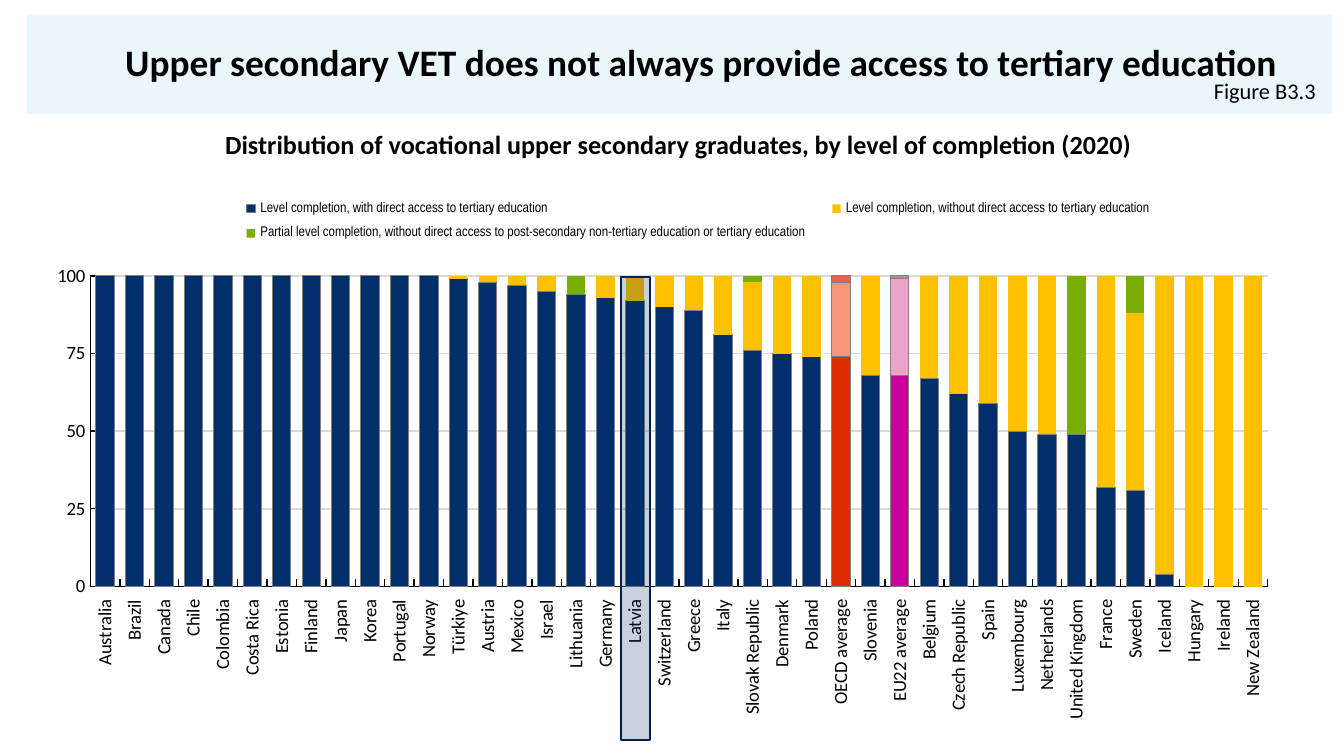
from pptx import Presentation, util as u
from pptx.chart.data import CategoryChartData
from pptx.dml.color import RGBColor
from pptx.enum import chart as ce, shapes, text
from pptx.oxml import parse_xml
from pptx.oxml.ns import nsdecls

SCALE = 914400 / 134.4
NAMES = [
    "Level completion, with direct access to tertiary education",
    "Level completion, without direct access to tertiary education",
    "Partial level completion, without direct access to "
    "post-secondary non-tertiary education or tertiary education",
]
HUES = ["002F6C", "FFC000", "79AF02"]
MEANS = {
    "OECD average": ["DD2C00", "F79779", "E4644B"],
    "EU22 average": ["CC0099", "EAA4C8", "C8838D"],
}
ROWS = [
    *[(land, 100, 0, 0) for land in (
        "Australia", "Brazil", "Canada", "Chile", "Colombia", "Costa Rica",
        "Estonia", "Finland", "Japan", "Korea", "Portugal", "Norway")],
    ("Türkiye", 99, 1, 0), ("Austria", 98, 2, 0), ("Mexico", 97, 3, 0),
    ("Israel", 95, 5, 0), ("Lithuania", 94, 0, 6), ("Germany", 93, 7, 0),
    ("Latvia", 92, 8, 0), ("Switzerland", 90, 10, 0), ("Greece", 89, 11, 0),
    ("Italy", 81, 19, 0), ("Slovak Republic", 76, 22, 2),
    ("Denmark", 75, 25, 0), ("Poland", 74, 26, 0),
    ("OECD average", 74, 24, 2), ("Slovenia", 68, 32, 0),
    ("EU22 average", 68, 31, 1), ("Belgium", 67, 33, 0),
    ("Czech Republic", 62, 38, 0), ("Spain", 59, 41, 0),
    ("Luxembourg", 50, 50, 0), ("Netherlands", 49, 51, 0),
    ("United Kingdom", 49, 0, 51), ("France", 32, 68, 0),
    ("Sweden", 31, 57, 12), ("Iceland", 4, 96, 0),
    *[(land, 0, 100, 0) for land in ("Hungary", "Ireland", "New Zealand")],
]


def px(*nums):
    """Turn pixel lengths into EMU."""
    return [u.Emu(round(n * SCALE)) for n in nums]


def rgb(code):
    """Make a colour from a hex string."""
    return RGBColor.from_string(code)


def paint(fmt, hue, edge=None, width=0.5):
    """Give a solid fill and, if named, an outline."""
    fmt.fill.solid()
    fmt.fill.fore_color.rgb = rgb(hue)
    if edge:
        fmt.line.color.rgb = rgb(edge)
        fmt.line.width = u.Pt(width)


def style(font, size, hue="000000", name="Calibri", bold=False):
    """Set the look of a font."""
    font.size, font.name, font.bold = u.Pt(size), name, bold
    font.color.rgb = rgb(hue)


def add_box(slide, area, hue, alpha, edge=None):
    """Add a see-through rectangle."""
    box = slide.shapes.add_shape(shapes.MSO_SHAPE.RECTANGLE, *px(*area))
    box.shadow.inherit = False
    paint(box, hue, edge, 1)
    if not edge:
        box.line.fill.background()
    tint = box.fill._xPr.xpath("a:solidFill/a:srgbClr")[0]
    tint.append(parse_xml(f'<a:alpha {nsdecls("a")} val="{alpha * 1000}"/>'))


def add_text(slide, area, words, size, align, bold=False, anchor="TOP"):
    """Add a line of text."""
    frame = slide.shapes.add_textbox(*px(*area)).text_frame
    frame.word_wrap = True
    frame.vertical_anchor = text.MSO_ANCHOR[anchor]
    frame.text = words
    para = frame.paragraphs[0]
    para.alignment = text.PP_ALIGN[align]
    para.line_spacing = 0.9
    style(para.runs[0].font, size, bold=bold)


def layout(x, y, w, h, inner=False):
    """Make a fixed chart layout from fractions."""
    target = '<c:layoutTarget val="inner"/>' if inner else ""
    sizes = "".join(f'<c:{k} val="{v}"/>' for k, v in zip("xywh", (x, y, w, h)))
    return parse_xml(
        f'<c:layout {nsdecls("c")}><c:manualLayout>{target}'
        f'<c:xMode val="edge"/><c:yMode val="edge"/>{sizes}'
        "</c:manualLayout></c:layout>")


def set_axis(axis):
    """Style the line, ticks and labels of an axis."""
    axis.major_tick_mark = ce.XL_TICK_MARK.INSIDE
    axis.minor_tick_mark = ce.XL_TICK_MARK.NONE
    axis.format.line.color.rgb = rgb("000101")
    axis.format.line.width = u.Pt(0.75)
    style(axis.tick_labels.font, 10, "000101")


def set_axes(chart):
    """Set the scale, grid and upright labels."""
    cat, val = chart.category_axis, chart.value_axis
    set_axis(cat)
    set_axis(val)
    cat.tick_label_position = ce.XL_TICK_LABEL_POSITION.LOW
    turn = cat._element.xpath("c:txPr/a:bodyPr")[0]
    turn.set("rot", "-5400000")
    turn.set("vert", "horz")
    val.minimum_scale, val.maximum_scale, val.major_unit = 0, 100, 25
    val.tick_labels.number_format = "General"
    val.tick_labels.number_format_is_linked = False
    grid = val.major_gridlines.format.line
    grid.color.rgb, grid.width = rgb("D9D9D9"), u.Pt(1)


def set_legend(chart):
    """Place the legend above the plot."""
    chart.has_legend = True
    key = chart.legend
    key.position = ce.XL_LEGEND_POSITION.TOP
    key.include_in_layout = True
    style(key.font, 7.5, name="Arial Narrow")
    for old in key._element.xpath("c:layout"):
        key._element.remove(old)
    spot = key._element.xpath("c:legendPos")[0]
    spot.addnext(layout(0.15, 0.02, 0.73, 0.11))


def add_chart(slide, area):
    """Add the stacked columns by country."""
    lands, *stacks = zip(*ROWS)
    data = CategoryChartData()
    data.categories = lands
    for name, vals in zip(NAMES, stacks):
        data.add_series(name, vals)
    kind = ce.XL_CHART_TYPE.COLUMN_STACKED
    chart = slide.shapes.add_chart(kind, *px(*area), data).chart
    chart.has_title = False
    style(chart.font, 10)
    plot = chart.plots[0]
    plot.gap_width, plot.overlap = 60, 100
    plot.vary_by_categories = False
    for i, series in enumerate(plot.series):
        paint(series.format, HUES[i], None if i else "808080")
        series.invert_if_negative = False
        for land, hues in MEANS.items():
            point = series.points[lands.index(land)]
            paint(point.format, hues[i], "808080")
    set_axes(chart)
    set_legend(chart)
    field = chart.element.xpath("c:chart/c:plotArea")[0]
    for old in field.xpath("c:layout"):
        field.remove(old)
    field.insert(0, layout(0.048, 0.173, 0.905, 0.555, True))


def main():
    """Build the slide and save it."""
    deck = Presentation()
    deck.slide_width, deck.slide_height = px(1344, 756)
    slide = deck.slides.add_slide(deck.slide_layouts[6])
    add_box(slide, (27, 15, 1305, 99), "6FC5D5", 14)
    add_text(slide, (112, 23, 1193, 82),
             "Upper secondary VET does not always provide access to "
             "tertiary education", 20, "LEFT", True, "MIDDLE")
    add_text(slide, (28, 125, 1301, 42),
             "Distribution of vocational upper secondary graduates, "
             "by level of completion (2020)", 14, "CENTER", True)
    add_text(slide, (1167, 74, 162, 31), "Figure B3.3", 12, "RIGHT")
    add_chart(slide, (28, 179, 1301, 560))
    add_box(slide, (621, 277, 29, 463), "032E61", 22, "022248")
    deck.save("out.pptx")


if __name__ == "__main__":
    main()
